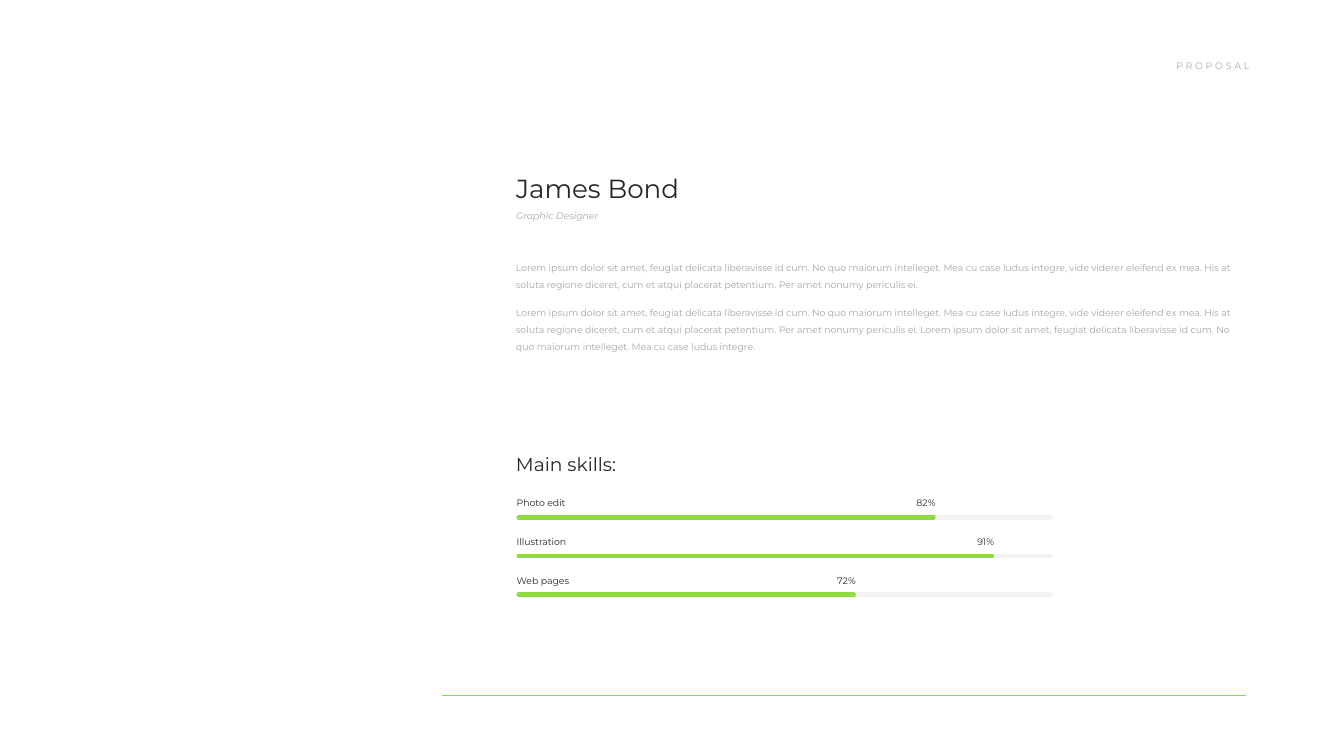
from dataclasses import dataclass
from lxml.etree import SubElement as Sub
from pptx import Presentation as Deck
from pptx.dml.color import RGBColor as Color
from pptx.enum.shapes import MSO_CONNECTOR as Link
from pptx.enum.text import MSO_ANCHOR as Anchor, MSO_AUTO_SIZE as Fit, PP_ALIGN as Align
from pptx.oxml.ns import qn
from pptx.util import Inches, Pt

WIDE, HIGH = 20, 11.25
COLS, ROWS = 100, 50


@dataclass(frozen=True)
class Theme:
    font: str = "Montserrat"
    dark: str = "262626"
    soft: str = "A6A6A6"
    pale: str = "F2F2F2"
    green: str = "90DC3F"
    name: int = 28
    head: int = 20
    body: int = 10
    bar: float = 5
    rule: float = 1.5


THEME = Theme()
LOREM = ("Lorem ipsum dolor sit amet, feugiat delicata liberavisse id cum. "
         "No quo maiorum intelleget. Mea cu case ludus integre, ")
INTRO = (LOREM + "vide viderer eleifend ex mea. His at soluta regione diceret, "
         "cum et atqui placerat petentium. Per amet nonumy periculis ei.")
STORY = [INTRO, INTRO + " " + LOREM.removesuffix(", ") + "."]
SKILLS = [("Photo edit", "82%", 0.78), ("Illustration", "91%", 0.89), ("Web pages", "72%", 0.63)]


def col(n):
    return Inches(n * WIDE / COLS)


def row(n):
    return Inches(n * HIGH / ROWS)


def place(box):
    x, y, w, h = box
    return col(x), row(y), col(w), row(h)


def write(para, text, size, tone, slant=None):
    run = para.add_run()
    run.text = text
    font = run.font
    font.name, font.size, font.italic = THEME.font, Pt(size), slant
    font.color.rgb = Color.from_string(tone)
    return run


def label(slide, box, text, size, tone, align=Align.LEFT):
    frame = slide.shapes.add_textbox(*place(box)).text_frame
    frame.word_wrap = True
    frame.auto_size = Fit.SHAPE_TO_FIT_TEXT
    para = frame.paragraphs[0]
    para.alignment = align
    return write(para, text, size, tone)


def stroke(slide, x, y, w, tone, width, cap="flat"):
    line = slide.shapes.add_connector(Link.STRAIGHT, col(x), row(y), col(x + w), row(y))
    line.line.color.rgb = Color.from_string(tone)
    line.line.width = Pt(width)
    line.line._get_or_add_ln().set("cap", cap)
    Sub(line._element.spPr, qn("a:effectLst"))


def draw_frame(slide, tag, rule):
    run = label(slide, tag, "PROPOSAL", THEME.body, THEME.soft, Align.RIGHT)
    run.font._element.set("spc", "300")
    stroke(slide, *rule, THEME.green, THEME.rule)


def draw_name(slide, box):
    title = slide.shapes.title
    title.left, title.top, title.width, title.height = place(box)
    frame = title.text_frame
    frame.word_wrap = True
    frame.auto_size = Fit.SHAPE_TO_FIT_TEXT
    frame.vertical_anchor = Anchor.TOP
    name, role = frame.paragraphs[0], frame.add_paragraph()
    name.alignment = role.alignment = Align.LEFT
    role.space_before = Pt(6)
    write(name, "James Bond", THEME.name, THEME.dark)
    write(role, "Graphic Designer", THEME.body, THEME.soft, True)


def draw_story(slide, box):
    frame = slide.shapes.add_textbox(*place(box)).text_frame
    frame.word_wrap = True
    frame.auto_size = Fit.SHAPE_TO_FIT_TEXT
    for i, text in enumerate(STORY):
        para = frame.add_paragraph() if i else frame.paragraphs[0]
        para.line_spacing = 1.5
        para.space_before = Pt(12)
        write(para, text, THEME.body, THEME.soft)


def draw_skills(slide, box):
    x, y, w, h = box
    label(slide, (x, y, w / 3, 1.96), "Main skills:", THEME.head, THEME.dark)
    left, span = x + 0.7, w - 0.7
    first, step = y + 4.49, (h - 4.49) / (len(SKILLS) - 1)
    for i, (skill, score, share) in enumerate(SKILLS):
        mid = first + i * step
        top, end = mid - 1.53, left + share * span
        stroke(slide, left, mid, span, THEME.pale, THEME.bar, "rnd")
        stroke(slide, left, mid, share * span, THEME.green, THEME.bar, "rnd")
        label(slide, (x + 0.05, top, 12.65, 1.2), skill, THEME.body, THEME.dark)
        label(slide, (end - 7.2, top, 7.85, 1.2), score, THEME.body, THEME.dark, Align.RIGHT)


def main():
    deck = Deck()
    deck.slide_width, deck.slide_height = Inches(WIDE), Inches(HIGH)
    slide = deck.slides.add_slide(deck.slide_layouts[5])
    draw_frame(slide, (81.65, 3.73, 11.8, 1.2), (32.9, 46, 59.8))
    draw_name(slide, (37.9, 11.2, 19.15, 3.73))
    draw_story(slide, (37.9, 16.76, 54.8, 6.67))
    draw_skills(slide, (37.9, 29.73, 40.25, 9.6))
    deck.save("out.pptx")


if __name__ == "__main__":
    main()
